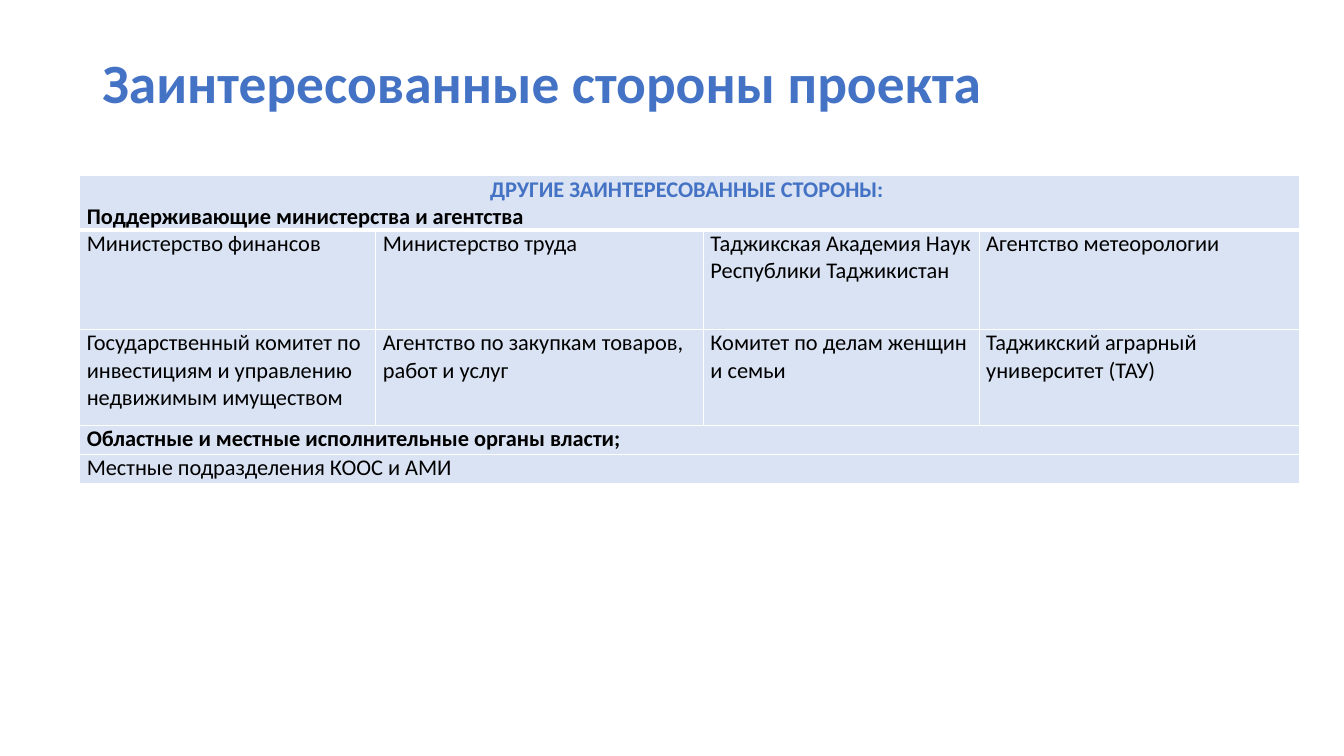
"""Build the slide listing the other stakeholders of the project."""
import dataclasses

import lxml.etree
import pptx
import pptx.dml.color
import pptx.enum.text
import pptx.oxml.ns
import pptx.util

Pt = pptx.util.Pt
ALIGN = pptx.enum.text.PP_ALIGN
qn = pptx.oxml.ns.qn


@dataclasses.dataclass(frozen=True)
class Theme:
    font: str = "Calibri"
    accent: str = "4472C4"
    text: str = "000000"
    cell: str = "DAE3F3"
    border: str = "FFFFFF"
    title_size: float = 39.6
    body_size: float = 16
    thin: float = 1
    thick: float = 3


class Deck:
    def __init__(self, prs, theme):
        self.theme = theme
        self.s = prs.slides.add_slide(prs.slide_layouts[6])

    def paragraph(self, p, text, size, color, bold=False, align=ALIGN.LEFT):
        p.text = text
        p.alignment = align
        p.font.name = self.theme.font
        p.font.size = Pt(size)
        p.font.bold = bold
        p.font.color.rgb = pptx.dml.color.RGBColor.from_string(color)

    def title(self, text, left, top, width, height):
        sp = self.s.shapes.add_textbox(Pt(left), Pt(top), Pt(width), Pt(height))
        tf = sp.text_frame
        tf.word_wrap = True
        tf.vertical_anchor = pptx.enum.text.MSO_ANCHOR.MIDDLE
        p = tf.paragraphs[0]
        p.line_spacing = 0.9
        self.paragraph(p, text, self.theme.title_size, self.theme.accent, bold=True)

    def borders(self, cell, **widths):
        tc_pr = cell._tc.get_or_add_tcPr()
        for side in "LRTB":
            width = Pt(widths.get(side, self.theme.thin))
            ln = lxml.etree.SubElement(tc_pr, qn(f"a:ln{side}"), w=str(int(width)))
            fill = lxml.etree.SubElement(ln, qn("a:solidFill"))
            lxml.etree.SubElement(fill, qn("a:srgbClr"), val=self.theme.border)

    def cell(self, cell, paragraphs):
        cell.margin_left = cell.margin_right = Pt(5)
        cell.margin_top = cell.margin_bottom = 0
        tf = cell.text_frame
        for i, (text, style) in enumerate(paragraphs):
            p = tf.add_paragraph() if i else tf.paragraphs[0]
            self.paragraph(p, text, self.theme.body_size, **{"color": self.theme.text, **style})

    def table(self, rows, left, top, widths, heights):
        table = self.s.shapes.add_table(
            len(heights), len(widths), Pt(left), Pt(top), Pt(sum(widths)), Pt(sum(heights))
        ).table
        for column, width in zip(table.columns, widths):
            column.width = Pt(width)
        for i, (row, height) in enumerate(zip(rows, heights)):
            table.rows[i].height = Pt(height)
            edge = {0: {"B": self.theme.thick}, 1: {"T": self.theme.thick}}.get(i, {})
            for j in range(len(widths)):
                cell = table.cell(i, j)
                self.borders(cell, **edge)
                cell.fill.solid()
                cell.fill.fore_color.rgb = pptx.dml.color.RGBColor.from_string(self.theme.cell)
            if len(row) == 1:
                table.cell(i, 0).merge(table.cell(i, len(widths) - 1))
            for j, paragraphs in enumerate(row):
                self.cell(table.cell(i, j), paragraphs)


def main():
    prs = pptx.Presentation()
    prs.slide_width, prs.slide_height = Pt(960), Pt(540)
    theme = Theme()
    deck = Deck(prs, theme)
    deck.title("Заинтересованные стороны проекта", 66, 28.8, 828, 64.8)

    bold = {"bold": True}
    heading = {"bold": True, "color": theme.accent, "align": ALIGN.CENTER}
    ministries = ["Министерство финансов", "Министерство труда",
                  "Таджикская Академия Наук Республики Таджикистан", "Агентство метеорологии"]
    agencies = ["Государственный комитет по инвестициям и управлению недвижимым имуществом",
                "Агентство по закупкам товаров, работ и услуг",
                "Комитет по делам женщин и семьи", "Таджикский аграрный университет (ТАУ)"]
    rows = [
        [[("ДРУГИЕ ЗАИНТЕРЕСОВАННЫЕ СТОРОНЫ: ", heading),
          ("Поддерживающие министерства и агентства", bold)]],
        [[(name, {})] for name in ministries],
        [[(name, {})] for name in agencies],
        [[("Областные и местные исполнительные органы власти;", bold)]],
        [[("Местные подразделения КООС и АМИ", {})]],
    ]
    deck.table(rows, 57, 125.5, [211.5, 234, 197, 228.5], [39, 71, 68.5, 20.7, 20.7])
    prs.save("out.pptx")


if __name__ == "__main__":
    main()
